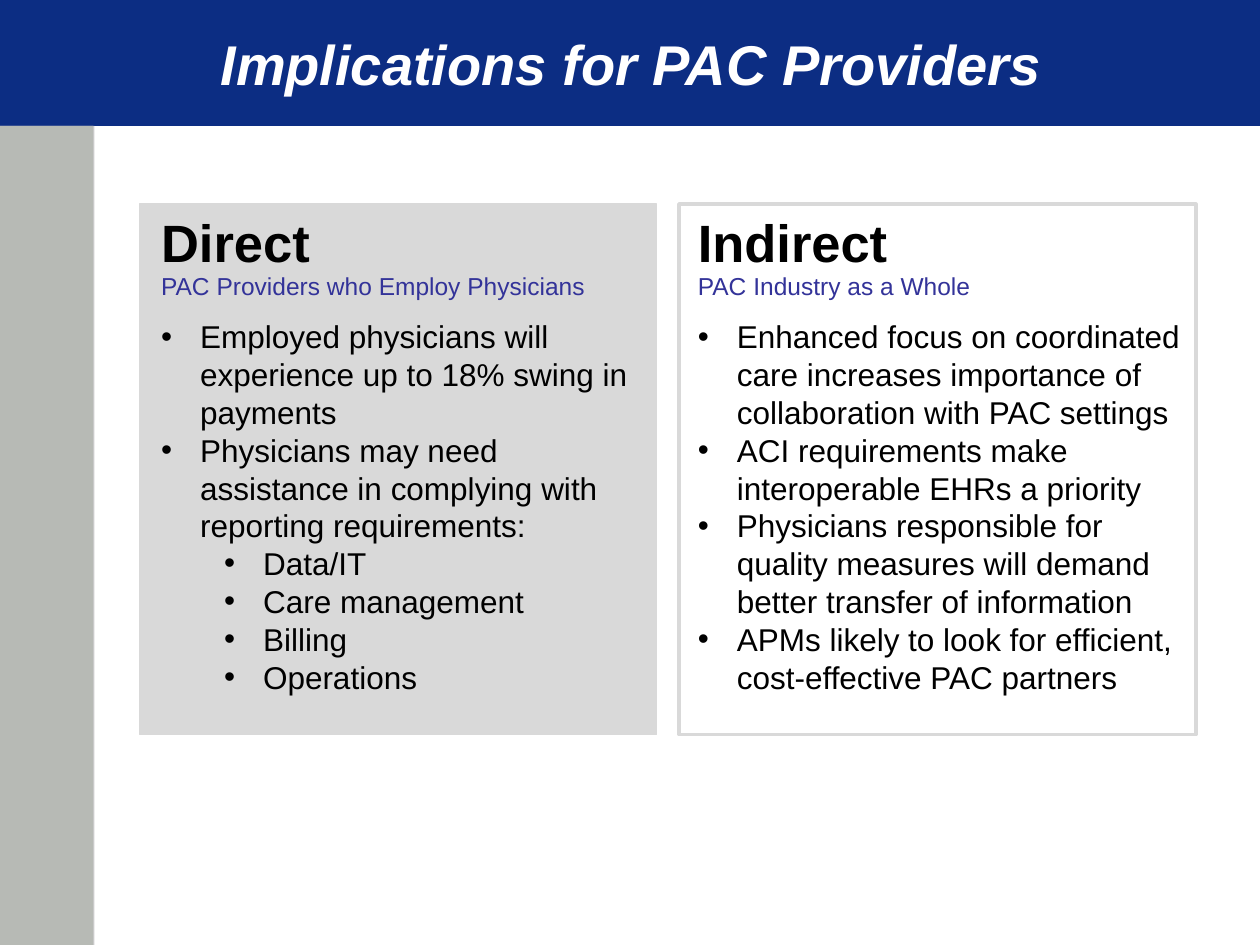
import dataclasses

import lxml.etree
import pptx
import pptx.dml.color
import pptx.enum.shapes
import pptx.enum.text
import pptx.oxml.ns
import pptx.util

Inches = pptx.util.Inches


@dataclasses.dataclass(frozen=True)
class Theme:
    font: str = "Arial"
    navy: str = "0C2D83"
    strip: str = "B7BAB5"
    strip_edge: str = "CCCCCC"
    panel: str = "D9D9D9"
    audience: str = "333399"
    white: str = "FFFFFF"
    black: str = "000000"
    title_size: int = 32
    heading_size: int = 30
    audience_size: int = 14
    bullet_size: int = 18


def rgb(value):
    return pptx.dml.color.RGBColor.from_string(value)


class SlideBuilder:
    def __init__(self, slide, theme):
        self.slide = slide
        self.theme = theme

    def style(self, paragraph, size, color, bold=False, italic=False):
        for run in paragraph.runs:
            run.font.name = self.theme.font
            run.font.size = pptx.util.Pt(size)
            run.font.color.rgb = rgb(color)
            run.font.bold = bold
            run.font.italic = italic

    def rectangle(self, left, top, width, height, fill=None, line=None, weight=0.75):
        box = self.slide.shapes.add_shape(
            pptx.enum.shapes.MSO_SHAPE.RECTANGLE,
            Inches(left), Inches(top), Inches(width), Inches(height))
        box.shadow.inherit = False
        if fill:
            box.fill.solid()
            box.fill.fore_color.rgb = rgb(fill)
        else:
            box.fill.background()
        if line:
            box.line.color.rgb = rgb(line)
            box.line.width = pptx.util.Pt(weight)
        else:
            box.line.fill.background()

    def title(self, text):
        title = self.slide.shapes.title
        # Bring the title in front of the band
        title.element.getparent().append(title.element)
        title.left, title.top = Inches(0.92), Inches(0)
        title.width, title.height = Inches(8.18), Inches(1)
        frame = title.text_frame
        frame.text = text
        frame.vertical_anchor = pptx.enum.text.MSO_ANCHOR.MIDDLE
        frame.paragraphs[0].alignment = pptx.enum.text.PP_ALIGN.CENTER
        self.style(frame.paragraphs[0], self.theme.title_size, self.theme.white,
                   bold=True, italic=True)

    def text_frame(self, left, top, width, height):
        box = self.slide.shapes.add_textbox(
            Inches(left), Inches(top), Inches(width), Inches(height))
        box.text_frame.word_wrap = True
        return box.text_frame

    def label(self, text, left, top, width, height, size, color, bold=False):
        frame = self.text_frame(left, top, width, height)
        frame.text = text
        self.style(frame.paragraphs[0], size, color, bold)

    def bullets(self, items, left, top, width, height):
        frame = self.text_frame(left, top, width, height)
        frame.text = "\n".join(text for _, text in items)
        for paragraph, (level, _) in zip(frame.paragraphs, items):
            paragraph.level = level
            properties = paragraph._p.get_or_add_pPr()
            properties.set("marL", str(Inches(0.31 + 0.5 * level)))
            properties.set("indent", str(Inches(-0.31)))
            lxml.etree.SubElement(
                properties, pptx.oxml.ns.qn("a:buFont"), typeface=self.theme.font)
            lxml.etree.SubElement(
                properties, pptx.oxml.ns.qn("a:buChar"), char="•")
            self.style(paragraph, self.theme.bullet_size, self.theme.black)

    def column(self, left, heading, audience, items):
        theme = self.theme
        self.label(heading, left, 1.62, 3.02, 0.61,
                   theme.heading_size, theme.black, bold=True)
        self.label(audience, left, 2.1, 3.85, 0.34,
                   theme.audience_size, theme.audience)
        self.bullets(items, left, 2.47, 4.1, 3.13)


DIRECT = [
    (0, "Employed physicians will experience up to 18% swing in payments"),
    (0, "Physicians may need assistance in complying with reporting requirements:"),
    (1, "Data/IT"),
    (1, "Care management"),
    (1, "Billing"),
    (1, "Operations"),
]
INDIRECT = [
    (0, "Enhanced focus on coordinated care increases importance of "
        "collaboration with PAC settings"),
    (0, "ACI requirements make interoperable EHRs a priority"),
    (0, "Physicians responsible for quality measures will demand better "
        "transfer of information"),
    (0, "APMs likely to look for efficient, cost-effective PAC partners"),
]


def main():
    presentation = pptx.Presentation()
    presentation.slide_width = Inches(10)
    presentation.slide_height = Inches(7.5)
    theme = Theme()
    slide = presentation.slides.add_slide(presentation.slide_layouts[5])
    builder = SlideBuilder(slide, theme)

    # Title band and side strip
    builder.rectangle(0, 0, 10, 1, fill=theme.navy)
    builder.rectangle(0, 1, 0.75, 6.5, fill=theme.strip_edge)
    builder.rectangle(0, 1, 0.74, 6.5, fill=theme.strip)
    builder.title("Implications for PAC Providers")

    # Filled panel: direct implications
    builder.rectangle(1.11, 1.62, 4.1, 4.21, fill=theme.panel, line=theme.panel)
    builder.column(1.18, "Direct", "PAC Providers who Employ Physicians", DIRECT)

    # Outlined panel: indirect implications
    builder.rectangle(5.39, 1.62, 4.1, 4.21, line=theme.panel, weight=2.25)
    builder.column(5.44, "Indirect", "PAC Industry as a Whole", INDIRECT)

    presentation.save("out.pptx")


if __name__ == "__main__":
    main()
